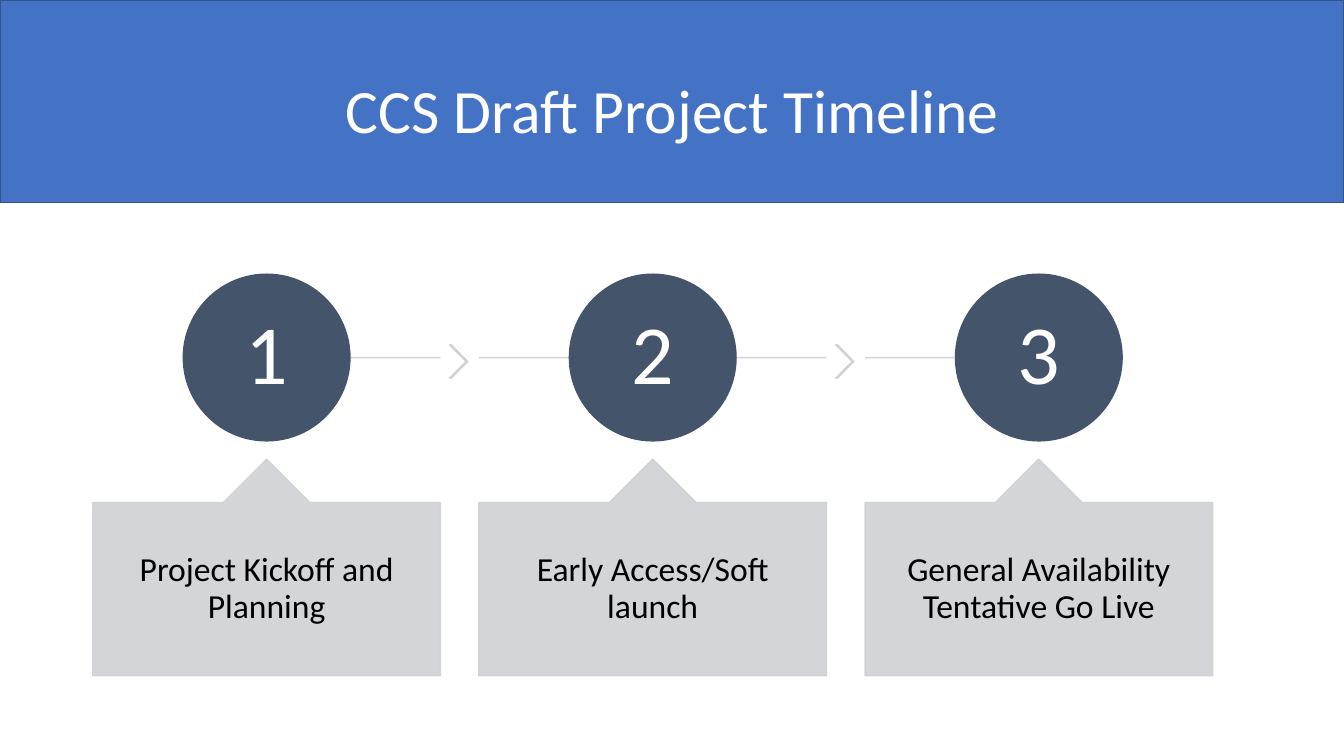
from dataclasses import dataclass

from lxml import etree
from pptx import Presentation
from pptx import util as u
from pptx.dml.color import RGBColor
from pptx.enum import shapes, text
from pptx.oxml import ns

BLUE = RGBColor(0x44, 0x72, 0xC4)
BLUE_EDGE = RGBColor(0x32, 0x54, 0x91)
SLATE = RGBColor(0x44, 0x54, 0x6A)
GREY = RGBColor(0xCF, 0xD1, 0xD4)
WHITE = RGBColor(0xFF, 0xFF, 0xFF)
BLACK = RGBColor(0, 0, 0)
FONT = "Calibri"

# Timeline grid, in centimetres
LEFT, PITCH, CARD_W = 2.34, 9.73, 8.76
CARD_TOP, CARD_H = 11.57, 5.46
CIRCLE, AXIS_Y = 4.2, 9.01
CHEVRON_W, CHEVRON_H = 0.46, 0.84
CHEVRON_GAP, CHEVRON_TOP = 0.23, 8.69


@dataclass
class Step:
    number: int
    label: str


STEPS = [
    Step(1, "Project Kickoff and Planning"),
    Step(2, "Early Access/Soft launch"),
    Step(3, "General Availability Tentative Go Live"),
]


def make_translucent(shape) -> None:
    for color in shape.element.iter(ns.qn("a:srgbClr")):
        etree.SubElement(color, ns.qn("a:alpha"), val="90000")


def add_box(s, kind, x: float, y: float, w: float, h: float,
            fill: RGBColor, edge: RGBColor):
    sp = s.shapes.add_shape(kind, u.Cm(x), u.Cm(y), u.Cm(w), u.Cm(h))
    sp.shadow.inherit = False
    sp.fill.solid()
    sp.fill.fore_color.rgb = fill
    sp.line.color.rgb = edge
    sp.line.width = u.Pt(1)
    return sp


def set_text(sp, words: str, size: int, color: RGBColor,
             margin_x: float, margin_y: float) -> None:
    tf = sp.text_frame
    tf.text = words
    tf.word_wrap = True
    tf.vertical_anchor = text.MSO_ANCHOR.MIDDLE
    tf.margin_left = tf.margin_right = u.Cm(margin_x)
    tf.margin_top = tf.margin_bottom = u.Cm(margin_y)
    p = tf.paragraphs[0]
    p.alignment = text.PP_ALIGN.CENTER
    p.line_spacing = 0.9
    r = p.runs[0]
    r.font.name = FONT
    r.font.size = u.Pt(size)
    r.font.color.rgb = color


def add_axis(s, x1: float, x2: float) -> None:
    line = s.shapes.add_connector(shapes.MSO_CONNECTOR.STRAIGHT, u.Cm(x1),
                                  u.Cm(AXIS_Y), u.Cm(x2), u.Cm(AXIS_Y))
    line.line.color.rgb = GREY
    line.line.width = u.Pt(1)
    make_translucent(line)
    etree.SubElement(line.element.spPr, ns.qn("a:effectLst"))


def add_step(s, step: Step, index: int) -> None:
    x = LEFT + index * PITCH
    centre, right = x + CARD_W / 2, x + CARD_W
    is_first, is_last = index == 0, index == len(STEPS) - 1

    # Axis and chevron leading to the next step
    add_axis(s, centre if is_first else x, centre if is_last else right)
    if not is_last:
        chevron = add_box(s, shapes.MSO_SHAPE.CHEVRON, right + CHEVRON_GAP,
                          CHEVRON_TOP, CHEVRON_W, CHEVRON_H, GREY, GREY)
        chevron.adjustments[0] = 0.9
        make_translucent(chevron)

    # Numbered circle
    circle = add_box(s, shapes.MSO_SHAPE.OVAL, centre - CIRCLE / 2,
                     AXIS_Y - CIRCLE / 2, CIRCLE, CIRCLE, SLATE, SLATE)
    set_text(circle, str(step.number), 60, WHITE, 0.15, 0.15)

    # Callout card
    card = add_box(s, shapes.MSO_SHAPE.UP_ARROW_CALLOUT, x, CARD_TOP,
                   CARD_W, CARD_H, GREY, GREY)
    for i, value in enumerate((0.5, 0.2, 0.2, 1)):
        card.adjustments[i] = value
    make_translucent(card)
    set_text(card, step.label, 24, BLACK, 0.69, 0.46)


def main() -> None:
    prs = Presentation()
    prs.slide_width, prs.slide_height = u.Cm(33.87), u.Cm(19.05)
    s = prs.slides.add_slide(prs.slide_layouts[5])

    # Title on a banner
    title = s.shapes.title
    title.left, title.top = u.Cm(LEFT), u.Cm(1.02)
    title.width, title.height = u.Cm(29.21), u.Cm(3.68)
    set_text(title, "CCS Draft Project Timeline", 44, WHITE, 0.25, 0.13)
    banner = add_box(s, shapes.MSO_SHAPE.RECTANGLE, 0, 0, 33.87, 5.11,
                     BLUE, BLUE_EDGE)
    title.element.addprevious(banner.element)

    # Timeline
    for index, step in enumerate(STEPS):
        add_step(s, step, index)

    prs.save("out.pptx")


if __name__ == "__main__":
    main()
